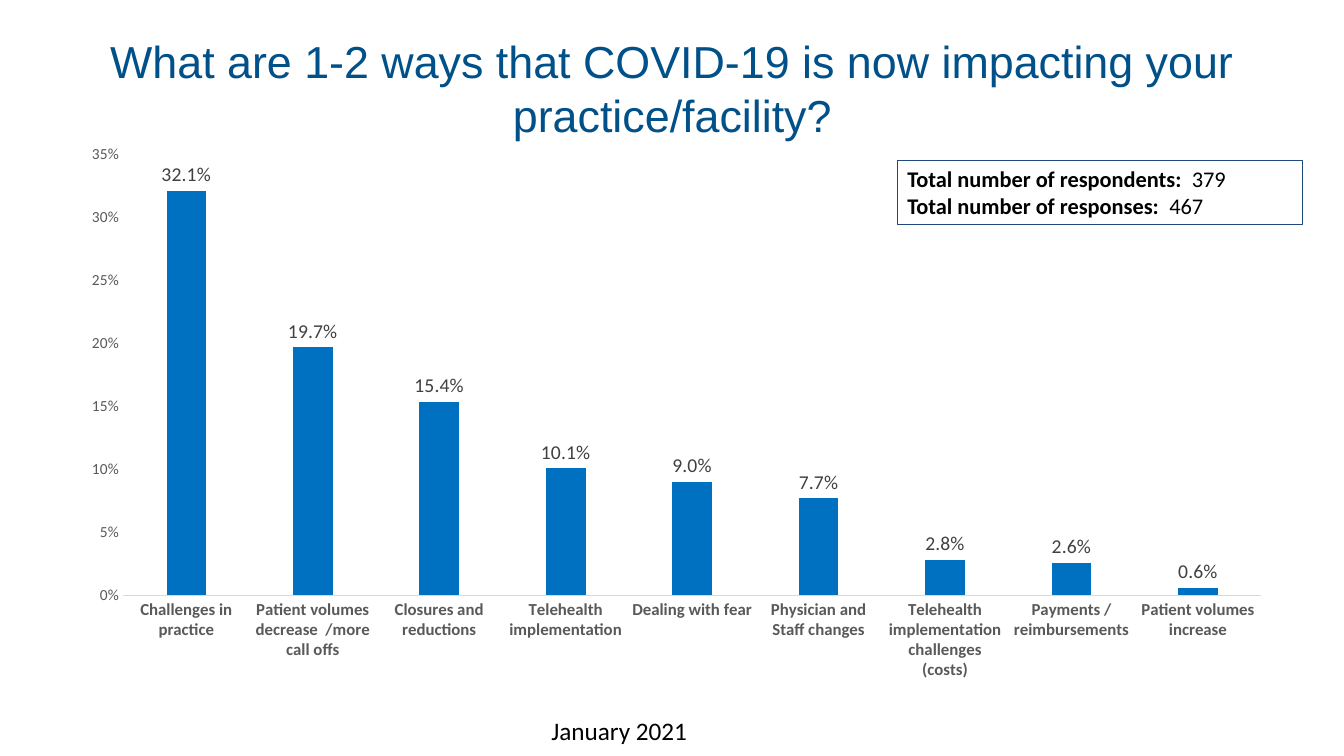
from pptx import Presentation
from pptx.chart.data import CategoryChartData
from pptx.dml.color import RGBColor
from pptx.enum import chart as ch, shapes, text
from pptx.util import Inches, Pt

HUES = {"title": "005089", "edge": "1F497D", "bar": "0070C0", "axis": "D9D9D9",
        "tick": "595959", "label": "404040", "ink": "000000"}


def hue(name):
    return RGBColor.from_string(HUES[name])


def style(font, size, color, bold=False, face="Calibri"):
    font.name, font.size, font.bold = face, Pt(size), bold
    font.color.rgb = hue(color)


prs = Presentation()
prs.slide_width, prs.slide_height = Inches(13.33), Inches(7.5)
slide = prs.slides.add_slide(prs.slide_layouts[6])

# Title
title = slide.shapes.add_textbox(Inches(0.92), Inches(0.14), Inches(11.5), Inches(1.45))
frame = title.text_frame
frame.word_wrap = True
frame.vertical_anchor = text.MSO_ANCHOR.MIDDLE
frame.text = "What are 1-2 ways that COVID-19 is now impacting your practice/facility?"
para = frame.paragraphs[0]
para.alignment = text.PP_ALIGN.CENTER
style(para.runs[0].font, 32, "title", face="Arial")

# Totals box
box = slide.shapes.add_shape(shapes.MSO_SHAPE.RECTANGLE,
                             Inches(8.9), Inches(1.59), Inches(4.02), Inches(0.64))
box.shadow.inherit = False
box.fill.background()
box.line.color.rgb = hue("edge")
box.line.width = Pt(0.75)
frame = box.text_frame
frame.word_wrap = True
frame.auto_size = text.MSO_AUTO_SIZE.SHAPE_TO_FIT_TEXT
frame.vertical_anchor = text.MSO_ANCHOR.TOP
totals = [("Total number of respondents:  ", "379"), ("Total number of responses:  ", "467")]
for i, (name, count) in enumerate(totals):
    para = frame.add_paragraph() if i else frame.paragraphs[0]
    para.alignment = text.PP_ALIGN.LEFT
    for words, bold in ((name, True), (count, False)):
        run = para.add_run()
        run.text = words
        style(run.font, 16, "ink", bold)

# Column chart
shares = {
    "Challenges in practice": 0.321,
    "Patient volumes decrease\u00a0 /more call offs": 0.197,
    "Closures and reductions": 0.154,
    "Telehealth implementation": 0.101,
    "Dealing with fear": 0.09,
    "Physician and Staff changes": 0.077,
    "Telehealth implementation challenges (costs)": 0.028,
    "Payments / reimbursements": 0.026,
    "Patient volumes increase": 0.006,
}
data = CategoryChartData(number_format="0.0%")
data.categories = list(shares)
data.add_series("Series 1", list(shares.values()))
chart = slide.shapes.add_chart(ch.XL_CHART_TYPE.COLUMN_CLUSTERED, Inches(0.67), Inches(1.33),
                               Inches(12.08), Inches(5.52), data).chart
chart.has_title = chart.has_legend = False
style(chart.font, 10, "ink")

# Bars and their labels
plot = chart.plots[0]
plot.vary_by_categories = False
plot.gap_width, plot.overlap = 219, -27
fill = plot.series[0].format.fill
fill.solid()
fill.fore_color.rgb = hue("bar")
plot.has_data_labels = True
labels = plot.data_labels
labels.show_value = True
labels.number_format, labels.number_format_is_linked = "0.0%", False
labels.position = ch.XL_LABEL_POSITION.OUTSIDE_END
style(labels.font, 14, "label")

# Axes
cats, vals = chart.category_axis, chart.value_axis
for axis, size, bold in ((cats, 12, True), (vals, 11, False)):
    axis.has_major_gridlines = False
    axis.major_tick_mark = axis.minor_tick_mark = ch.XL_TICK_MARK.NONE
    style(axis.tick_labels.font, size, "tick", bold)
cats.format.line.color.rgb = hue("axis")
cats.format.line.width = Pt(0.75)
vals.format.line.fill.background()
vals.minimum_scale, vals.maximum_scale, vals.major_unit = 0, 0.35, 0.05
vals.tick_labels.number_format = "0%"
vals.tick_labels.number_format_is_linked = False

# Date
date = slide.shapes.add_textbox(Inches(5.37), Inches(7.05), Inches(4.22), Inches(0.4))
date.text_frame.word_wrap = True
date.text_frame.text = "January 2021"
style(date.text_frame.paragraphs[0].runs[0].font, 18, "ink")

prs.save("out.pptx")
